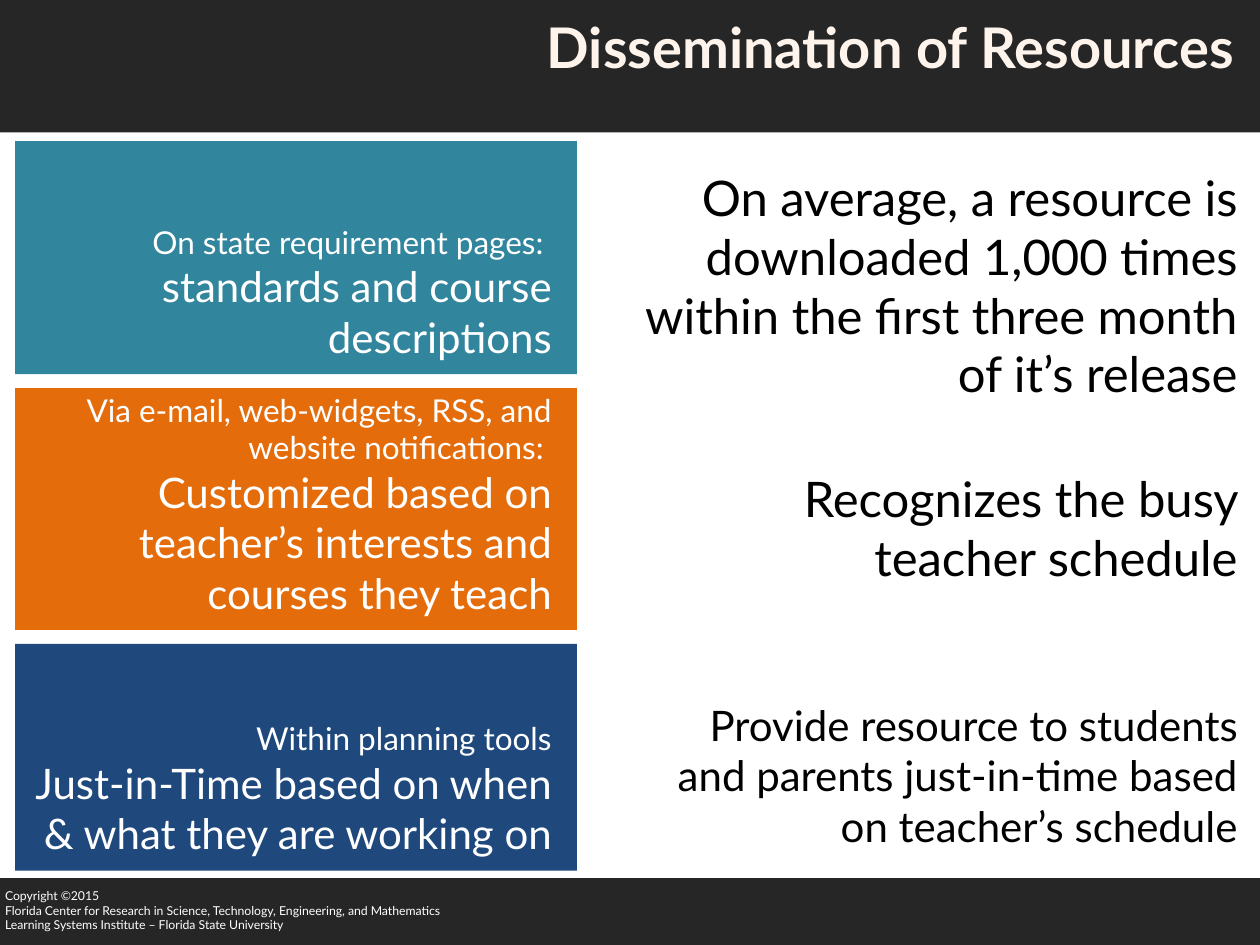
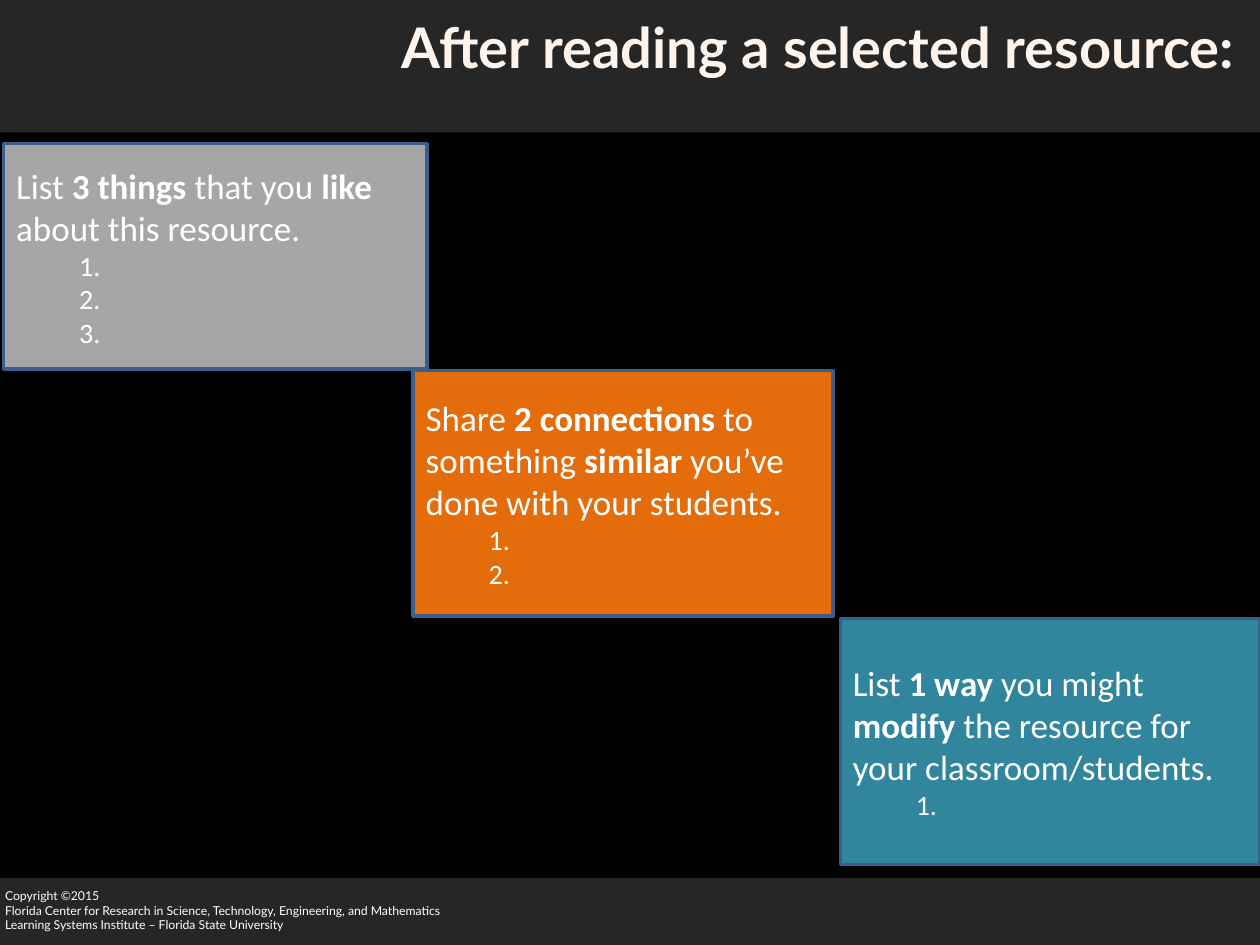
"""Build two slides on sharing teaching resources and reflecting on them."""
from dataclasses import dataclass

from pptx import Presentation
from pptx.dml.color import RGBColor
from pptx.enum import shapes, text
from pptx.util import Inches, Pt

WHITE, BLACK, CHARCOAL, CREAM = "FFFFFF", "000000", "262626", "FEF4EC"
TEAL, ORANGE, NAVY, GREY, OUTLINE = "31859C", "E46C0A", "1F497D", "A6A6A6", "3A5F8C"
HEADING_FONT, PROMPT_FONT = "Lato", "Calibri"
LEFT, RIGHT = text.PP_ALIGN.LEFT, text.PP_ALIGN.RIGHT
TOP, MIDDLE, BOTTOM = text.MSO_ANCHOR.TOP, text.MSO_ANCHOR.MIDDLE, text.MSO_ANCHOR.BOTTOM
COPYRIGHT = (
    "Copyright ©2015",
    "Florida Center for Research in Science, Technology, Engineering, and Mathematics",
    "Learning Systems Institute – Florida State University",
)


@dataclass(frozen=True)
class Box:
    """A rectangle in inches."""
    left: float
    top: float
    width: float
    height: float

    def lengths(self) -> list:
        """Return left, top, width and height as lengths."""
        return [Inches(n) for n in (self.left, self.top, self.width, self.height)]


@dataclass(frozen=True)
class Run:
    """A stretch of words in one size and weight."""
    words: str
    size: float
    bold: bool = False


@dataclass(frozen=True)
class Line:
    """A paragraph made of runs."""
    runs: tuple[Run, ...]
    level: int = 0


@dataclass(frozen=True)
class Channel:
    """A way of sharing resources and the benefit beside it."""
    box: Box
    color: str
    lead: str
    detail: str
    benefit_box: Box
    benefit: str
    benefit_size: float


@dataclass(frozen=True)
class Prompt:
    """A reflection task with numbered blanks for answers."""
    box: Box
    color: str
    words: tuple[str, ...]
    blanks: int


def rgb(color: str) -> RGBColor:
    """Turn a hex string into a colour."""
    return RGBColor.from_string(color)


def paint(target, color: str) -> None:
    """Give a shape or background a solid fill."""
    target.fill.solid()
    target.fill.fore_color.rgb = rgb(color)


def set_frame(frame, anchor, insets: tuple[float, ...] = (0.1, 0.05, 0.1, 0.05)) -> None:
    """Set wrapping, anchor and left, top, right and bottom insets."""
    frame.word_wrap = True
    frame.vertical_anchor = anchor
    (frame.margin_left, frame.margin_top,
     frame.margin_right, frame.margin_bottom) = map(Inches, insets)


def write(frame, lines: list[Line], color: str, font: str = HEADING_FONT, align=LEFT) -> None:
    """Write paragraphs run by run."""
    for index, line in enumerate(lines):
        paragraph = frame.add_paragraph() if index else frame.paragraphs[0]
        paragraph.alignment = align
        paragraph.level = line.level
        for part in line.runs:
            run = paragraph.add_run()
            run.text = part.words
            run.font.name = font
            run.font.size = Pt(part.size)
            run.font.bold = part.bold
            run.font.color.rgb = rgb(color)


def add_panel(slide, box: Box, color: str, outline: str = ""):
    """Add a flat rectangle, outlined if a colour is given."""
    panel = slide.shapes.add_shape(shapes.MSO_SHAPE.RECTANGLE, *box.lengths())
    panel.shadow.inherit = False
    paint(panel, color)
    if outline:
        panel.line.color.rgb = rgb(outline)
        panel.line.width = Pt(2)
    else:
        panel.line.fill.background()
    return panel


def add_titled_slide(deck, heading: str, background: str):
    """Add a slide with the shared title band and footer."""
    slide = deck.slides.add_slide(deck.slide_layouts[5])
    paint(slide.background, background)
    title = slide.shapes.title
    title.left, title.top, title.width, title.height = Box(0, 0, 10, 1.05).lengths()
    paint(title, CHARCOAL)
    set_frame(title.text_frame, TOP, (0.1, 0.1, 0.2, 0.05))
    title.text_frame.auto_size = text.MSO_AUTO_SIZE.NONE
    write(title.text_frame, [Line((Run(heading, 32, True),))], CREAM, align=RIGHT)

    footer = add_panel(slide, Box(-0.01, 6.97, 10.01, 0.53), CHARCOAL).text_frame
    set_frame(footer, BOTTOM, (0.05, 0.05, 0.1, 0.1))
    write(footer, [Line((Run(words, 7),)) for words in COPYRIGHT], WHITE)
    return slide


def add_channel(slide, channel: Channel) -> None:
    """Draw a channel panel and its benefit."""
    panel = add_panel(slide, channel.box, channel.color).text_frame
    set_frame(panel, BOTTOM, (0.1, 0.05, 0.2, 0.1))
    write(panel, [Line((Run(channel.lead, 18),)), Line((Run(channel.detail, 24),))],
          WHITE, align=RIGHT)

    benefit = slide.shapes.add_textbox(*channel.benefit_box.lengths()).text_frame
    set_frame(benefit, TOP)
    benefit.auto_size = text.MSO_AUTO_SIZE.SHAPE_TO_FIT_TEXT
    write(benefit, [Line((Run(channel.benefit, channel.benefit_size),))], BLACK, align=RIGHT)


def add_prompt(slide, prompt: Prompt) -> None:
    """Draw a prompt whose every second phrase is bold, then its blanks."""
    panel = add_panel(slide, prompt.box, prompt.color, OUTLINE).text_frame
    set_frame(panel, MIDDLE)
    task = Line(tuple(Run(words, 20, index % 2 == 1) for index, words in enumerate(prompt.words)))
    blanks = [Line((Run(f"{number}.", 16),), 1) for number in range(1, prompt.blanks + 1)]
    write(panel, [task, *blanks], WHITE, PROMPT_FONT)


CHANNELS = (
    Channel(Box(0.12, 1.12, 4.46, 1.85), TEAL,
            "On state requirement pages: ", "standards and course descriptions",
            Box(4.92, 1.28, 5, 1.99),
            "On average, a resource is downloaded 1,000 times within the first three month "
            "of it’s release", 28),
    Channel(Box(0.12, 3.08, 4.46, 1.92), ORANGE,
            "Via e-mail, web-widgets, RSS, and website notifications: ",
            "Customized based on teacher’s interests and courses they teach",
            Box(4.92, 3.67, 5, 1.04), "Recognizes the busy teacher schedule", 28),
    Channel(Box(0.12, 5.11, 4.46, 1.8), NAVY,
            "Within planning tools", "Just-in-Time based on when & what they are working on",
            Box(4.92, 5.5, 5, 1.31),
            "Provide resource to students and parents just-in-time based on teacher’s schedule",
            24),
)

PROMPTS = (
    Prompt(Box(0.03, 1.14, 3.36, 1.79), GREY,
           ("List ", "3 things", " that you ", "like", " about this resource."), 3),
    Prompt(Box(3.28, 2.94, 3.33, 1.95), ORANGE,
           ("Share ", "2 connections", " to something ", "similar",
            " you’ve done with your students."), 2),
    Prompt(Box(6.67, 4.91, 3.33, 1.95), TEAL,
           ("List ", "1 way", " you might ", "modify",
            " the resource for your classroom/students."), 1),
)


def main() -> None:
    """Build and save the deck."""
    deck = Presentation()
    deck.slide_width, deck.slide_height = Inches(10), Inches(7.5)

    dissemination = add_titled_slide(deck, "Dissemination of Resources", WHITE)
    for channel in CHANNELS:
        add_channel(dissemination, channel)

    reflection = add_titled_slide(deck, "After reading a selected resource:", BLACK)
    for prompt in PROMPTS:
        add_prompt(reflection, prompt)

    deck.save("out.pptx")


if __name__ == "__main__":
    main()
